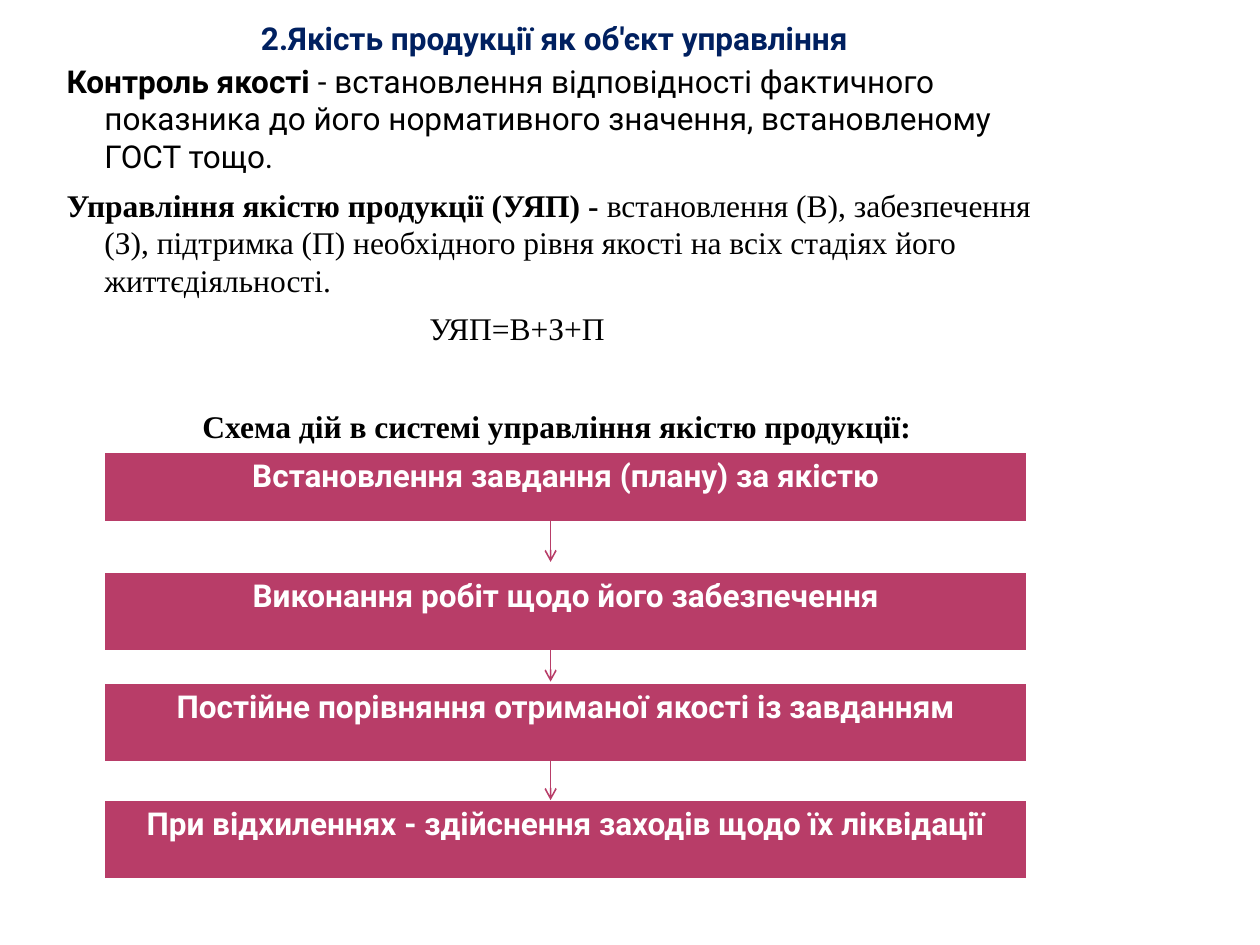
from dataclasses import dataclass

from pptx import Presentation
from pptx.dml.color import RGBColor
from pptx.enum.shapes import MSO_CONNECTOR
from pptx.enum.text import MSO_ANCHOR, PP_ALIGN
from pptx.oxml import parse_xml
from pptx.oxml.ns import nsdecls
from pptx.util import Inches, Pt

CENTER, LEFT = PP_ALIGN.CENTER, PP_ALIGN.LEFT
TOP, BOTTOM = MSO_ANCHOR.TOP, MSO_ANCHOR.BOTTOM
STRAIGHT = MSO_CONNECTOR.STRAIGHT


@dataclass(frozen=True)
class Theme:
    navy: str = "002060"
    black: str = "000000"
    white: str = "FFFFFF"
    crimson: str = "B83D68"
    sans: str = "Roboto"
    serif: str = "Times New Roman"
    size: float = 18
    arrow_width: float = 0.9


def set_format(target, values):
    for name, value in values.items():
        setattr(target, name, value)


class SlideBuilder:
    def __init__(self, slide, theme):
        self.s = slide
        self.theme = theme

    def add_run(self, p, text, font, color, bold):
        r = p.add_run()
        r.text = text
        set_format(r.font, {"name": font, "size": Pt(self.theme.size), "bold": bold})
        r.font.color.rgb = RGBColor.from_string(color)

    def text(self, box, paragraphs, color, anchor=TOP, inset=0.05, side_inset=0.1):
        """Each paragraph is (format, margin, first-line indent, font, [(text, bold)])."""
        tf = self.s.shapes.add_textbox(*map(Inches, box)).text_frame
        set_format(tf, {
            "word_wrap": True, "vertical_anchor": anchor,
            "margin_left": Inches(side_inset), "margin_right": Inches(side_inset),
            "margin_top": Inches(inset), "margin_bottom": Inches(inset),
        })
        for i, (layout, margin, indent, font, runs) in enumerate(paragraphs):
            p = tf.add_paragraph() if i else tf.paragraphs[0]
            p_pr = p._p.get_or_add_pPr()
            p_pr.set("marL", str(Inches(margin)))
            p_pr.set("indent", str(Inches(indent)))
            set_format(p, layout)
            for text, bold in runs:
                self.add_run(p, text, font, color, bold)

    def band(self, text, left, top, width, height):
        """One-cell table holding a step of the scheme."""
        th = self.theme
        table = self.s.shapes.add_table(
            1, 1, *map(Inches, (left, top, width, height))).table
        set_format(table, {"first_row": False, "horz_banding": False})
        cell = table.cell(0, 0)
        tc_pr = cell._tc.get_or_add_tcPr()
        for side, points in (("L", 1), ("R", 1), ("T", 1), ("B", 3)):
            tc_pr.append(parse_xml(
                f'<a:ln{side} {nsdecls("a")} w="{Pt(points)}"><a:solidFill>'
                f'<a:srgbClr val="{th.white}"/></a:solidFill></a:ln{side}>'))
        cell.fill.solid()
        cell.fill.fore_color.rgb = RGBColor.from_string(th.crimson)
        p = cell.text_frame.paragraphs[0]
        p.alignment = CENTER
        self.add_run(p, text, th.sans, th.white, True)

    def down_arrow(self, x, top, length):
        th = self.theme
        line = self.s.shapes.add_connector(
            STRAIGHT, *map(Inches, (x, top, x, top + length)))
        line.line.color.rgb = RGBColor.from_string(th.crimson)
        line.line.width = Pt(th.arrow_width)
        line.line._get_or_add_ln().append(
            parse_xml(f'<a:tailEnd {nsdecls("a")} type="arrow"/>'))
        line._element.spPr.append(parse_xml(f'<a:effectLst {nsdecls("a")}/>'))


def main():
    prs = Presentation()
    prs.slide_width, prs.slide_height = Inches(10), Inches(7.5)
    th = Theme()
    slide = SlideBuilder(prs.slides.add_slide(prs.slide_layouts[6]), th)

    slide.text((0.44, -0.04, 7.92, 0.49), [
        ({"alignment": CENTER}, 0, 0, th.sans,
         [("2.Якість продукції як об'єкт управління", True)]),
    ], th.navy, anchor=BOTTOM, inset=0, side_inset=0.05)

    slide.text((0.43, 0.44, 7.98, 6.62), [
        ({"alignment": LEFT}, 0.3, -0.3, th.sans, [
            ("Контроль якості ", True),
            ("- встановлення відповідності фактичного показника до його "
             "нормативного значення, встановленому ГОСТ тощо.", False)]),
        ({"alignment": LEFT, "space_before": Pt(6)}, 0.3, -0.3, th.serif, [
            ("Управління якістю продукції (УЯП) - ", True),
            ("встановлення (В), забезпечення (З), підтримка (П) необхідного "
             "рівня якості на всіх стадіях його життєдіяльності.", False)]),
        ({"alignment": LEFT, "space_before": Pt(6)}, 2.88, 0, th.serif,
         [("УЯП=В+З+П", False)]),
        ({"alignment": CENTER, "space_before": Pt(34)}, 0, 0, th.serif,
         [("Схема дій в системі управління якістю продукції:", True)]),
    ], th.black)

    steps = [
        ("Встановлення завдання (плану) за якістю", 3.59, 0.56),
        ("Виконання робіт щодо його забезпечення", 4.54, 0.64),
        ("Постійне порівняння отриманої якості із завданням", 5.42, 0.64),
        ("При відхиленнях - здійснення заходів щодо їх ліквідації", 6.35, 0.64),
    ]
    for text, top, height in steps:
        slide.band(text, 0.83, top, 7.32, height)
    for top in (4.06, 5.01, 5.95):
        slide.down_arrow(4.37, top, 0.4)

    prs.save("out.pptx")


if __name__ == "__main__":
    main()
